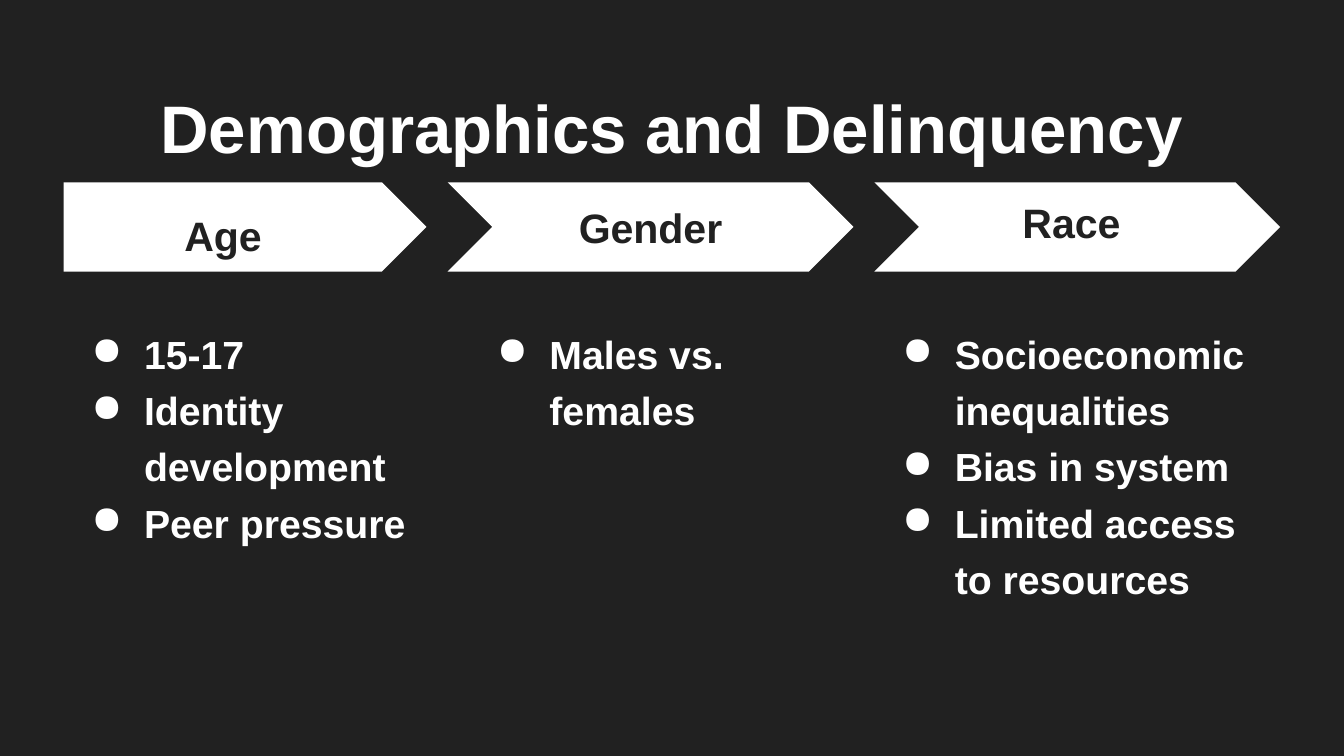
import pptx
import pptx.dml.color
import pptx.enum.shapes
import pptx.enum.text
import pptx.util
from lxml import etree

Pt = pptx.util.Pt
RGBColor = pptx.dml.color.RGBColor
MSO_SHAPE = pptx.enum.shapes.MSO_SHAPE
MSO_ANCHOR = pptx.enum.text.MSO_ANCHOR
PP_ALIGN = pptx.enum.text.PP_ALIGN

COLORS = {"dark": "212121", "light": "FFFFFF"}
ARROW_TOP, ARROW_HEIGHT = 97.7, 47.8
LABEL_WIDTH, LABEL_HEIGHT = 178, 24
LIST_TOP, LIST_HEIGHT = 162.7, 208.8

# Arrow and list: (left, width); label: center of its box
COLUMNS = [
    {"shape": MSO_SHAPE.PENTAGON, "arrow": (34.1, 194.4), "label": "Age",
     "center": (119.5, 126), "list": (34.1, 194.4),
     "points": ["15-17", "Identity development", "Peer pressure"]},
    {"shape": MSO_SHAPE.CHEVRON, "arrow": (239.8, 217.4), "label": "Gender",
     "center": (348.5, 121.7), "list": (251.3, 194.4),
     "points": ["Males vs. females"]},
    {"shape": MSO_SHAPE.CHEVRON, "arrow": (468.4, 217.4), "label": "Race",
     "center": (574, 119), "list": (468.4, 217.4),
     "points": ["Socioeconomic inequalities", "Bias in system",
                "Limited access to resources"]},
]

presentation = pptx.Presentation()
presentation.slide_width = Pt(720)
presentation.slide_height = Pt(405)
slide = presentation.slides.add_slide(presentation.slide_layouts[6])
slide.background.fill.solid()
slide.background.fill.fore_color.rgb = RGBColor.from_string(COLORS["dark"])


def add_text(box, lines, size, color, align, anchor=MSO_ANCHOR.TOP, top_inset=7.2):
    """Add a text box of bold lines; box is left, top, width, height."""
    text_frame = slide.shapes.add_textbox(*map(Pt, box)).text_frame
    text_frame.word_wrap = True
    text_frame.vertical_anchor = anchor
    text_frame.margin_top = Pt(top_inset)
    text_frame.margin_bottom = Pt(7.2)
    text_frame.text = "\n".join(lines)
    for paragraph in text_frame.paragraphs:
        paragraph.alignment = align
        font = paragraph.runs[0].font
        font.name, font.size, font.bold = "Arial", Pt(size), True
        font.color.rgb = RGBColor.from_string(COLORS[color])
    return text_frame


def add_bullet(paragraph):
    properties = paragraph._p.get_or_add_pPr()
    properties.set("marL", str(Pt(36)))
    properties.set("indent", str(-Pt(28.2)))
    namespace = pptx.oxml.ns.qn("a:buChar")
    etree.SubElement(properties, namespace).set("char", "●")


add_text((24.5, 35.3, 671, 45.4), ["Demographics and Delinquency"], 36, "light",
         PP_ALIGN.CENTER, top_inset=11)

for column in COLUMNS:
    left, width = column["arrow"]
    arrow = slide.shapes.add_shape(column["shape"], Pt(left), Pt(ARROW_TOP),
                                   Pt(width), Pt(ARROW_HEIGHT))
    arrow.adjustments[0] = 0.5
    arrow.shadow.inherit = False
    arrow.fill.solid()
    arrow.fill.fore_color.rgb = RGBColor.from_string(COLORS["light"])
    arrow.line.fill.background()

    center_x, center_y = column["center"]
    add_text((center_x - LABEL_WIDTH / 2, center_y - LABEL_HEIGHT / 2,
              LABEL_WIDTH, LABEL_HEIGHT),
             [column["label"]], 22, "dark", PP_ALIGN.CENTER, MSO_ANCHOR.MIDDLE)

    left, width = column["list"]
    text_frame = add_text((left, LIST_TOP, width, LIST_HEIGHT), column["points"],
                          21, "light", PP_ALIGN.LEFT, top_inset=9)
    for paragraph in text_frame.paragraphs:
        paragraph.line_spacing = 1.2
        add_bullet(paragraph)

presentation.save("out.pptx")
